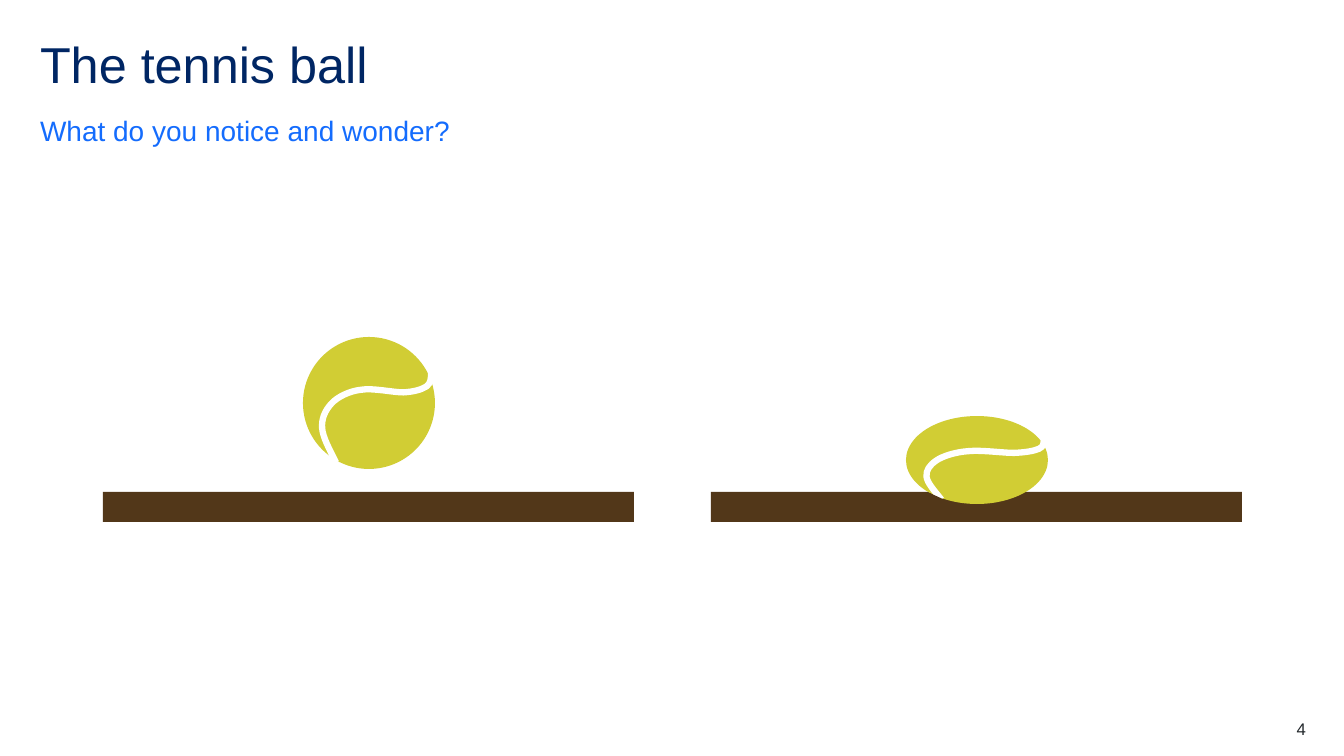
"""Build the tennis ball slide."""
from pptx import Presentation
from pptx.dml.color import RGBColor
from pptx.enum.shapes import MSO_SHAPE as Shape
from pptx.enum.text import MSO_ANCHOR as Anchor, MSO_AUTO_SIZE as AutoSize, PP_ALIGN as Align
from pptx.oxml.ns import qn
from pptx.oxml.xmlchemy import OxmlElement
from pptx.util import Emu, Pt

NAVY = RGBColor(0x00, 0x26, 0x64)
BLUE = RGBColor(0x14, 0x6C, 0xFD)
INK = RGBColor(0x22, 0x27, 0x2B)
WHITE = RGBColor(0xFF, 0xFF, 0xFF)
BROWN = RGBColor(0x52, 0x37, 0x19)
LIME = RGBColor(0xD1, 0xCD, 0x34)

SLIDE = (1344, 756)
TITLE = ("The tennis ball", (40, 40, 1266, 60), Anchor.TOP, Align.LEFT, 36, NAVY, 0.9)
QUESTION = ("What do you notice and wonder?", (40, 108, 1266, 39), Anchor.BOTTOM,
            Align.LEFT, 20, BLUE, 1.5)
NUMBER = ("4", (1227, 719, 79, 20), Anchor.TOP, Align.RIGHT, 12, INK, 1.0)

GROUNDS = [(103, 492, 531, 30), (711, 492, 531, 30)]
BALLS = [(303, 337, 132, 132), (906, 416, 142, 88)]
PATCH = (927, 497, 21, 8)
PATCH_TURN = 24.3
SEAM_START = (25, 95)
SEAM_CURVES = [
    [(20, 85), (15, 76), (14.5, 69)],
    [(14, 62), (16.5, 56), (21.5, 50.5)],
    [(26, 45.5), (35, 41), (44, 40)],
    [(53, 38.5), (68, 42), (76, 42)],
    [(84, 41.5), (89.5, 40), (93.5, 37.5)],
    [(97, 35), (97, 31), (97, 27)],
]


def px(n):
    return Emu(round(n * 914400 / 100.8))


def write(s, text, box, anchor, align, size, color, spacing):
    for name, n in zip(("left", "top", "width", "height"), box):
        setattr(s, name, px(n))
    tf = s.text_frame
    frame = dict(word_wrap=True, auto_size=AutoSize.NONE, vertical_anchor=anchor,
                 margin_left=0, margin_top=0, margin_right=0, margin_bottom=0)
    for name, value in frame.items():
        setattr(tf, name, value)
    p = tf.paragraphs[0]
    pPr = p._p.get_or_add_pPr()
    pPr.set("marL", "0")
    pPr.set("indent", "0")
    pPr.append(OxmlElement("a:buNone"))
    for name, value in dict(alignment=align, line_spacing=spacing, space_before=Pt(0)).items():
        setattr(p, name, value)
    r = p.add_run()
    r.text = text
    for name, value in dict(name="Arial", size=Pt(size), bold=False).items():
        setattr(r.font, name, value)
    r.font.color.rgb = color


def add_solid(shapes, kind, box, color):
    s = shapes.add_shape(kind, *map(px, box))
    s.shadow.inherit = False
    s.fill.solid()
    s.fill.fore_color.rgb = color
    s.line.fill.background()
    return s


def bend(s):
    lines = list(s._element.iter(qn("a:lnTo")))
    for i in range(0, len(lines), 3):
        curve = OxmlElement("a:cubicBezTo")
        lines[i].addprevious(curve)
        for line in lines[i:i + 3]:
            curve.append(line[0])
            line.getparent().remove(line)


def add_ball(shapes, box):
    add_solid(shapes, Shape.OVAL, box, LIME)
    x, y, w, h = box
    seam = [SEAM_START] + [point for curve in SEAM_CURVES for point in curve]
    points = [(px(x + w * fx / 100), px(y + h * fy / 100)) for fx, fy in seam]
    builder = shapes.build_freeform(*points[0])
    builder.add_line_segments(points[1:], close=False)
    s = builder.convert_to_shape()
    bend(s)
    s.shadow.inherit = False
    s.fill.background()
    s.line.color.rgb = WHITE
    s.line.width = Pt(4.5)


def main():
    prs = Presentation()
    prs.slide_width, prs.slide_height = map(px, SLIDE)
    slide = prs.slides.add_slide(prs.slide_layouts[1])
    shapes = slide.shapes
    write(shapes.title, *TITLE)
    write(slide.placeholders[1], *QUESTION)
    write(shapes.add_textbox(0, 0, 0, 0), *NUMBER)
    for box in GROUNDS:
        add_solid(shapes, Shape.RECTANGLE, box, BROWN)
    for box in BALLS:
        add_ball(shapes.add_group_shape().shapes, box)
    add_solid(shapes, Shape.RECTANGLE, PATCH, BROWN).rotation = PATCH_TURN
    prs.save("out.pptx")


if __name__ == "__main__":
    main()
